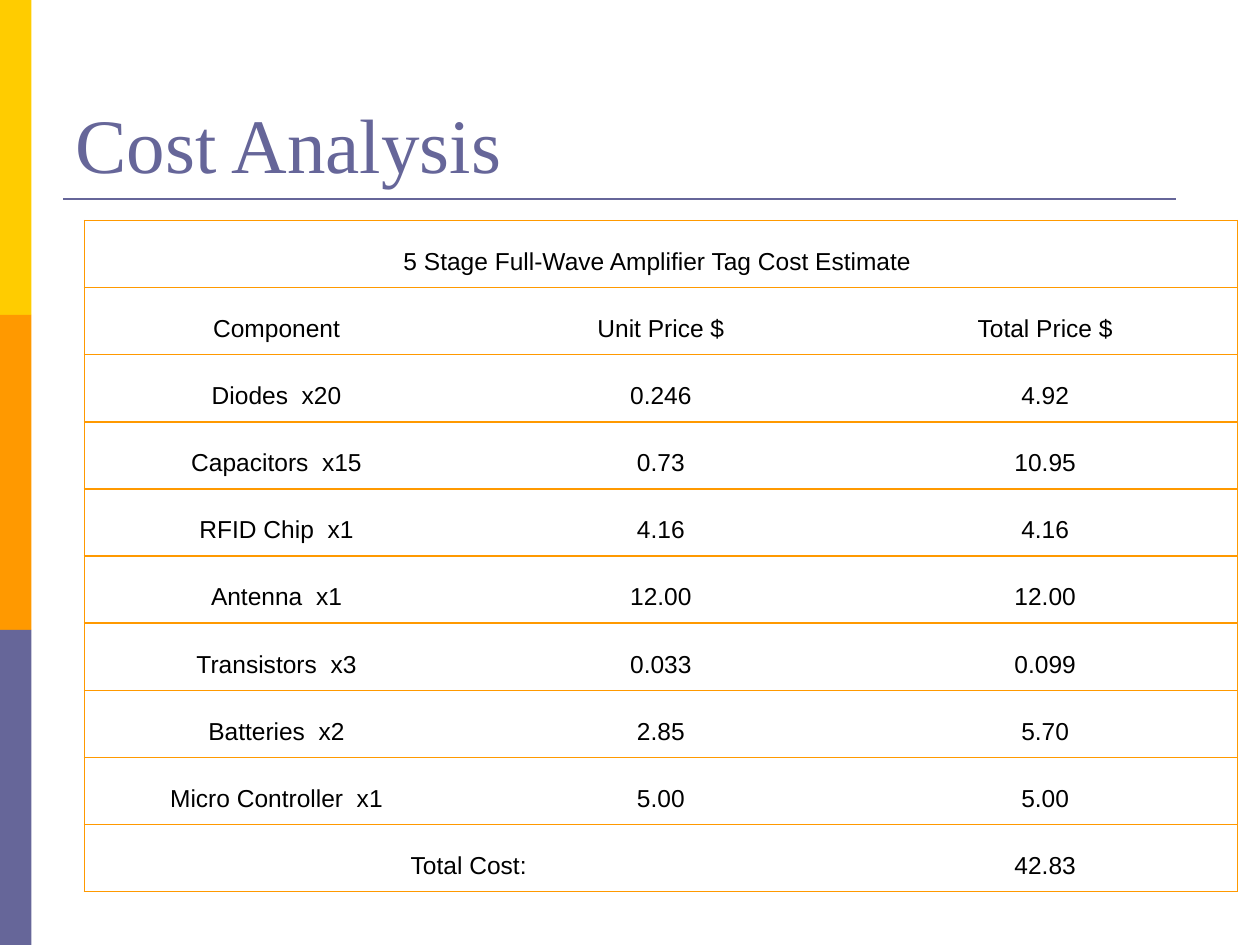
from dataclasses import dataclass

from lxml.etree import SubElement
from pptx import Presentation
from pptx.dml.color import RGBColor
from pptx.enum.shapes import MSO_CONNECTOR, MSO_SHAPE
from pptx.enum.text import MSO_ANCHOR, PP_ALIGN
from pptx.oxml import parse_xml
from pptx.oxml.ns import nsdecls, qn
from pptx.util import Inches, Pt

YELLOW, ORANGE, VIOLET = "FFCC00", "FF9900", "666699"
WHITE, BLACK = "FFFFFF", "000000"
BAR_W, BAR_H = 0.25, 2.5
TABLE_X, TABLE_Y, TABLE_W, TABLE_H = 0.67, 1.75, 9.15, 5.33


@dataclass
class Item:
    component: str
    unit_price: str
    total_price: str


ITEMS = [
    Item("Diodes  x20", "0.246", "4.92"),
    Item("Capacitors  x15", "0.73", "10.95"),
    Item("RFID Chip  x1", "4.16", "4.16"),
    Item("Antenna  x1", "12.00", "12.00"),
    Item("Transistors  x3", "0.033", "0.099"),
    Item("Batteries  x2", "2.85", "5.70"),
    Item("Micro Controller  x1", "5.00", "5.00"),
]


def rgb(value: str) -> RGBColor:
    return RGBColor.from_string(value)


def add_run(p, text: str, font: str, size: float, color: str) -> None:
    r = p.add_run()
    r.text = text
    r.font.name = font
    r.font.size = Pt(size)
    r.font.color.rgb = rgb(color)


def add_bar(slide, row: int, color: str) -> None:
    sp = slide.shapes.add_shape(MSO_SHAPE.RECTANGLE, 0, Inches(row * BAR_H),
                                Inches(BAR_W), Inches(BAR_H))
    sp.shadow.inherit = False
    sp.fill.solid()
    sp.fill.fore_color.rgb = rgb(color)
    sp.line.fill.background()


def add_rule(slide) -> None:
    line = slide.shapes.add_connector(MSO_CONNECTOR.STRAIGHT, Inches(0.5), Inches(1.58),
                                      Inches(9.33), Inches(1.58))
    line.line.color.rgb = rgb(VIOLET)
    line.line.width = Pt(1.5)
    SubElement(line._element.spPr, qn("a:effectLst"))


def add_title(slide, text: str) -> None:
    title = slide.shapes.title
    title.left, title.top = Inches(0.5), Inches(0.3)
    title.width, title.height = Inches(9), Inches(1.25)
    tf = title.text_frame
    tf.vertical_anchor = MSO_ANCHOR.BOTTOM
    p = tf.paragraphs[0]
    p.alignment = PP_ALIGN.LEFT
    add_run(p, text, "Times New Roman", 44, VIOLET)


def set_borders(cell, visible: str) -> None:
    """Draw the sides named in visible (from L, R, T, B) and hide the others."""
    tc_pr = cell._tc.get_or_add_tcPr()
    for i, side in enumerate("LRTB"):
        paint = (f'<a:solidFill><a:srgbClr val="{ORANGE}"/></a:solidFill>'
                 if side in visible else "<a:noFill/>")
        tc_pr.insert(i, parse_xml(
            f'<a:ln{side} {nsdecls("a")} w="{Pt(1)}">{paint}</a:ln{side}>'))


def format_cell(cell, text: str, borders: str) -> None:
    cell.fill.solid()
    cell.fill.fore_color.rgb = rgb(WHITE)
    cell.margin_left = cell.margin_right = Inches(0.09)
    cell.margin_top = cell.margin_bottom = 0
    set_borders(cell, borders)
    if text:
        p = cell.text_frame.paragraphs[0]
        p.alignment = PP_ALIGN.CENTER
        p.line_spacing = 2.0
        p.space_after = Pt(12)
        add_run(p, text, "Arial", 14, BLACK)


def add_cost_table(slide) -> None:
    rows = [
        ("5 Stage Full-Wave Amplifier Tag Cost Estimate ", "", ""),
        ("Component", "Unit Price $", "Total Price $"),
        *((i.component, i.unit_price, i.total_price) for i in ITEMS),
        ("Total Cost:", "", "42.83"),
    ]
    table = slide.shapes.add_table(len(rows), 3, Inches(TABLE_X), Inches(TABLE_Y),
                                   Inches(TABLE_W), Inches(TABLE_H)).table
    table.first_row = table.horz_banding = False
    last = len(rows) - 1
    table.cell(0, 0).merge(table.cell(0, 2))
    table.cell(last, 0).merge(table.cell(last, 1))
    for r, texts in enumerate(rows):
        for c, text in enumerate(texts):
            outer = {0: "L", 2: "R"}.get(c, "")
            if r == 0:
                outer = "LR"
            format_cell(table.cell(r, c), text, "TB" + outer)


def main() -> None:
    prs = Presentation()
    prs.slide_width, prs.slide_height = Inches(10), Inches(7.5)
    slide = prs.slides.add_slide(prs.slide_layouts[5])
    for row, color in enumerate((YELLOW, ORANGE, VIOLET)):
        add_bar(slide, row, color)
    add_rule(slide)
    add_title(slide, "Cost Analysis")
    add_cost_table(slide)
    prs.save("out.pptx")


if __name__ == "__main__":
    main()
